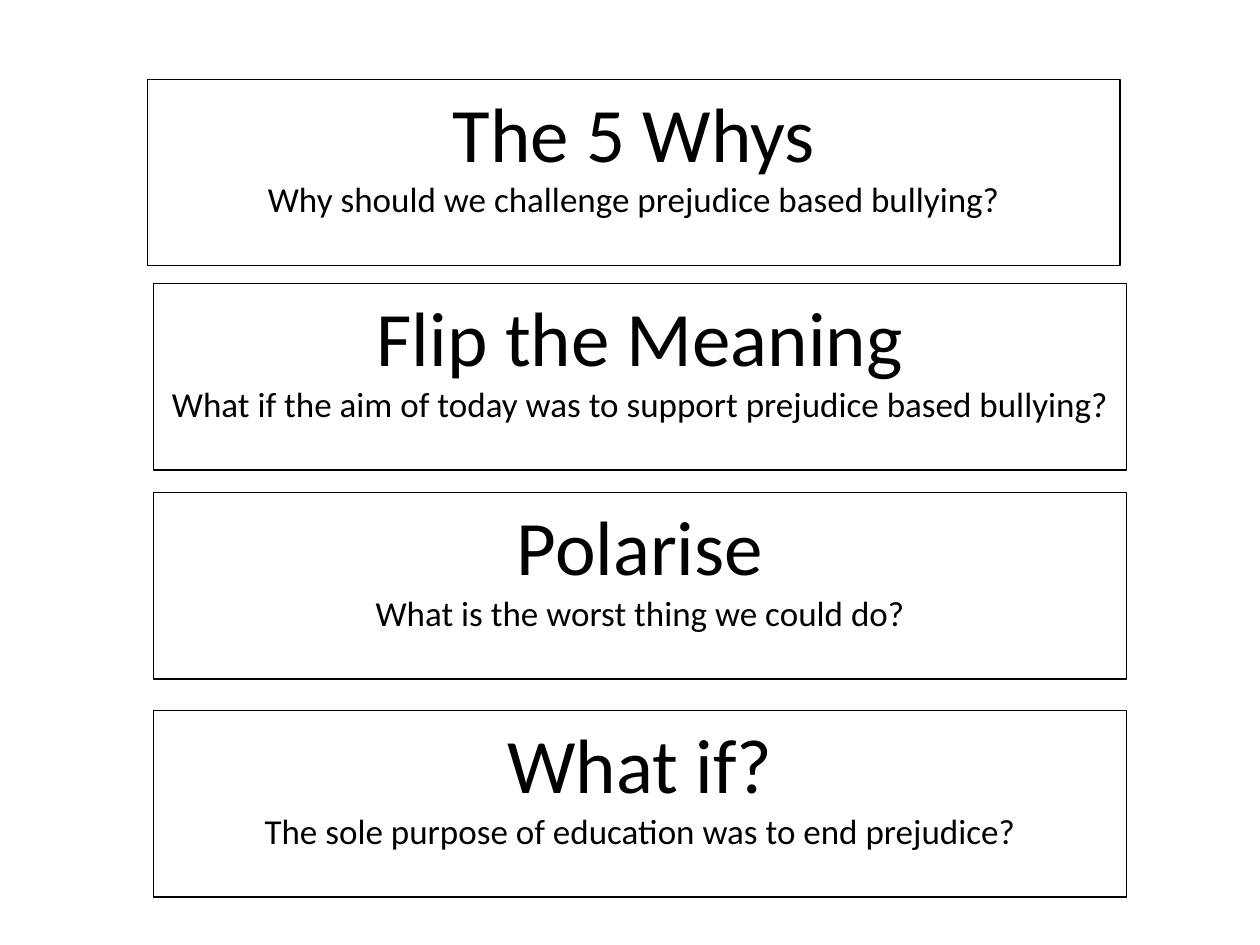
from pptx import Presentation
from pptx.dml.color import RGBColor
from pptx.enum.text import MSO_ANCHOR, PP_ALIGN
from pptx.util import Inches, Pt

COLORS = {"ink": "000000"}
FONT = "Calibri"
CARD_W, CARD_H = 7.72, 1.48
CARDS = [
    (1.17, 0.63, "The 5 Whys", "Why should we challenge prejudice based bullying?"),
    (1.22, 2.25, "Flip the Meaning",
     "What if the aim of today was to support prejudice based bullying?"),
    (1.22, 3.91, "Polarise", "What is the worst thing we could do?"),
    (1.22, 5.64, "What if?", "The sole purpose of education was to end prejudice?"),
]


def add_card(slide, left, top, width, height, heading, question):
    """Place an outlined card with a large heading above its question."""
    ink = RGBColor.from_string(COLORS["ink"])
    sp = slide.shapes.add_textbox(Inches(left), Inches(top), Inches(width), Inches(height))
    sp.line.color.rgb = ink
    sp.line.width = Pt(0.75)
    tf = sp.text_frame
    tf.word_wrap = True
    tf.vertical_anchor = MSO_ANCHOR.TOP
    tf.text = f"{heading}\n{question}"
    for p, size in zip(tf.paragraphs, (44, 20)):
        p.alignment = PP_ALIGN.CENTER
        p.font.name = FONT
        p.font.size = Pt(size)
        p.font.color.rgb = ink


def main():
    """Build the slide of thinking prompts."""
    prs = Presentation()
    prs.slide_width, prs.slide_height = Inches(10), Inches(7.5)
    slide = prs.slides.add_slide(prs.slide_layouts[6])
    for left, top, heading, question in CARDS:
        add_card(slide, left, top, CARD_W, CARD_H, heading, question)
    prs.save("out.pptx")


if __name__ == "__main__":
    main()
